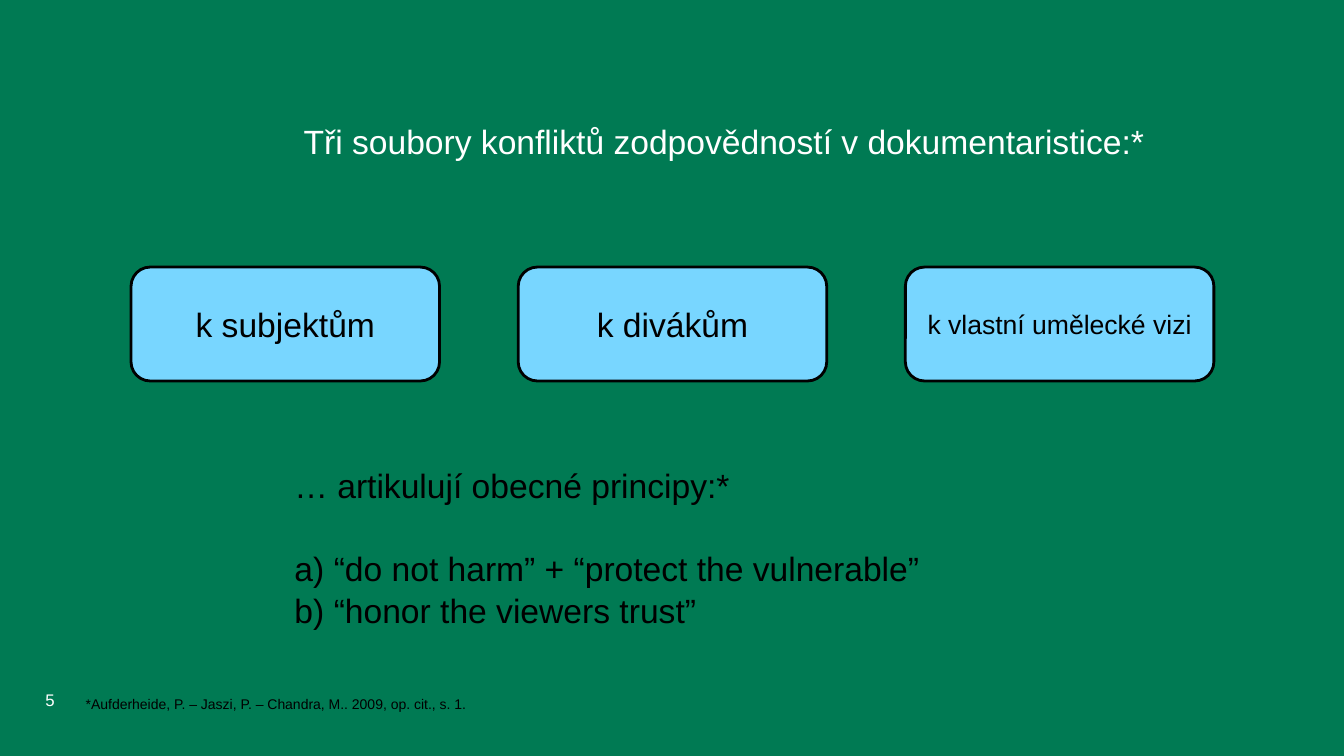
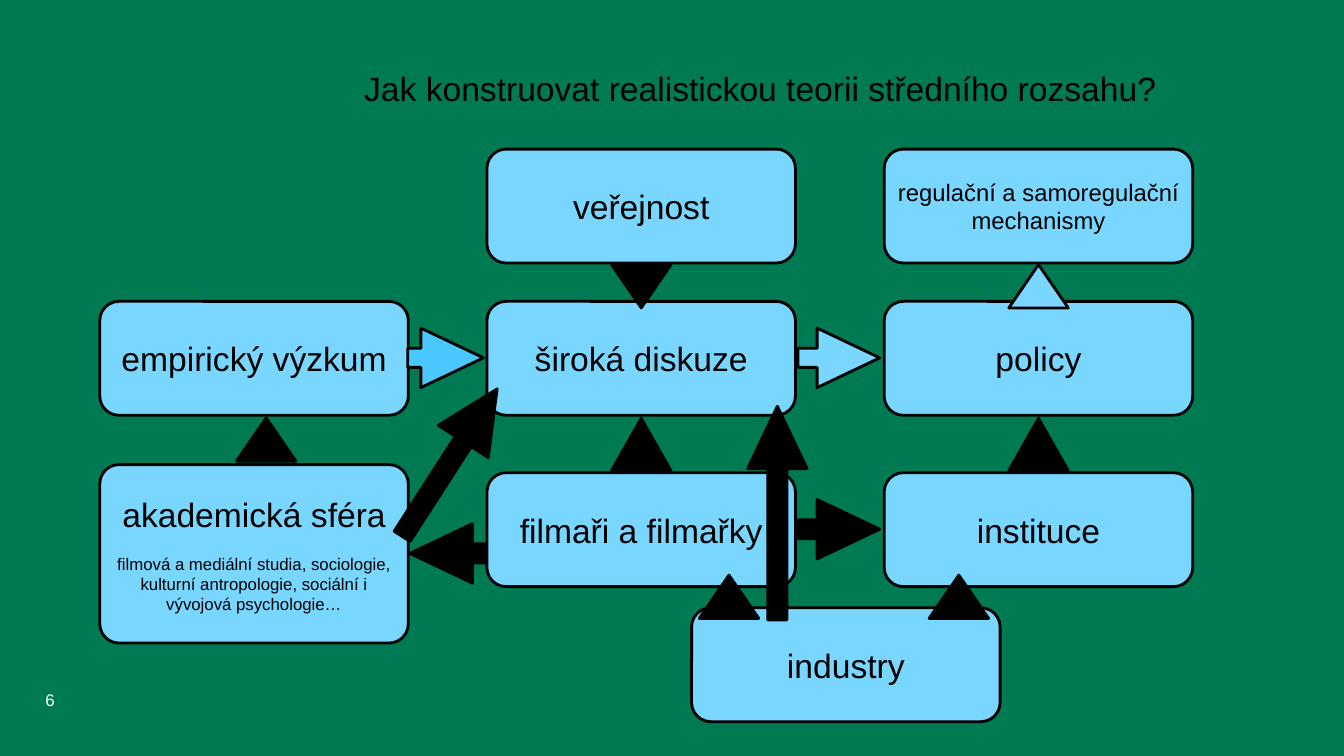
from pptx import Presentation
from pptx.dml.color import RGBColor
from pptx.enum.shapes import MSO_SHAPE
from pptx.enum.text import MSO_ANCHOR, MSO_AUTO_SIZE, PP_ALIGN
from pptx.oxml.ns import qn
from pptx.util import Pt
from lxml import etree

ROUNDED, ARROW = MSO_SHAPE.ROUNDED_RECTANGLE, MSO_SHAPE.RIGHT_ARROW
TOP, MIDDLE = MSO_ANCHOR.TOP, MSO_ANCHOR.MIDDLE
LEFT, CENTER = PP_ALIGN.LEFT, PP_ALIGN.CENTER
FIXED = MSO_AUTO_SIZE.NONE

# Shared look
GREEN, SKY, BLUE = "007A53", "78D6FF", "4BC8FF"
BLACK, WHITE = "000000", "FFFFFF"
FONT = "Arial"
TEXT_SIZE, SMALL_SIZE, NOTE_SIZE = 24, 12, 10
INSET = 5

# Node and arrow geometry, in px
NODE_WIDTH, NODE_HEIGHT, CORNER = 306, 113, 19
ARROW_THICKNESS, ARROW_HEAD, SHAFT_RATIO = 59, 62, 0.32
RIGHT, DOWN, BACK, UP = 0, 90, 180, 270


def px(count):
    """One px is a hundredth of an inch."""
    return int(count * 9144)


def color(value):
    return RGBColor.from_string(value)


def place(shape, left, top, width, height):
    shape.left, shape.top = px(left), px(top)
    shape.width, shape.height = px(width), px(height)


def set_frame(frame, inset=INSET, anchor=TOP, wrap=True):
    frame.auto_size = FIXED
    frame.word_wrap = wrap
    frame.vertical_anchor = anchor
    frame.margin_left = frame.margin_right = px(inset)
    frame.margin_top = frame.margin_bottom = px(inset)


def add_span(para, text, size=TEXT_SIZE, fill=BLACK):
    span = para.add_run()
    span.text = text
    span.font.name = FONT
    span.font.size = Pt(size)
    span.font.color.rgb = color(fill)


def paint(shape, fill):
    shape.shadow.inherit = False
    shape.fill.solid()
    shape.fill.fore_color.rgb = color(fill)
    shape.line.color.rgb = color(BLACK)
    shape.line.width = Pt(2)
    outline = shape.element.spPr.find(qn("a:ln"))
    etree.SubElement(outline, qn("a:round"))


def add_label(page, at, text, size, fill=BLACK, inset=INSET, anchor=TOP, spacing=1.0):
    box = page.shapes.add_textbox(0, 0, 0, 0)
    place(box, *at)
    set_frame(box.text_frame, inset, anchor, wrap=False)
    para = box.text_frame.paragraphs[0]
    para.line_spacing = spacing
    add_span(para, text, size, fill)


def add_page(deck, layout, number, title, title_at, title_color):
    page = deck.slides.add_slide(deck.slide_layouts[layout])
    heading = page.shapes.title
    place(heading, *title_at)
    set_frame(heading.text_frame, inset=0)
    para = heading.text_frame.paragraphs[0]
    para.alignment = CENTER
    para.line_spacing = 1.14
    add_span(para, title, fill=title_color)
    add_label(page, (45, 685, 14, 19), number, SMALL_SIZE, WHITE, 0, MIDDLE)
    return page


def add_node(page, left, top, text, size=TEXT_SIZE, height=NODE_HEIGHT, detail=None):
    node = page.shapes.add_shape(ROUNDED, 0, 0, 0, 0)
    place(node, left, top, NODE_WIDTH, height)
    node.adjustments[0] = CORNER / height
    paint(node, SKY)
    frame = node.text_frame
    set_frame(frame, anchor=MIDDLE)
    para = frame.paragraphs[0]
    para.alignment = CENTER
    add_span(para, text, size)
    if detail:
        para = frame.add_paragraph()
        para.alignment = CENTER
        para.space_before = Pt(14)
        add_span(para, detail, SMALL_SIZE)


def add_arrow(page, center_x, center_y, length, angle, fill=BLACK):
    arrow = page.shapes.add_shape(ARROW, 0, 0, 0, 0)
    place(arrow, center_x - length / 2, center_y - ARROW_THICKNESS / 2,
          length, ARROW_THICKNESS)
    arrow.adjustments[0] = SHAFT_RATIO
    arrow.adjustments[1] = ARROW_HEAD / min(length, ARROW_THICKNESS)
    arrow.rotation = angle
    paint(arrow, fill)


def set_marker(para, indent, tag, **attributes):
    properties = para._p.get_or_add_pPr()
    properties.set("marL", str(px(indent)))
    properties.set("indent", str(-px(indent)))
    etree.SubElement(properties, qn(tag), **attributes)


def fill_principles(body, lead, principles):
    place(body, 287, 454, 700, 170)
    frame = body.text_frame
    set_frame(frame)
    for index, text in enumerate([lead] + principles):
        para = frame.add_paragraph() if index else frame.paragraphs[0]
        if index:
            set_marker(para, 39, "a:buAutoNum", type="alphaLcParenR")
        else:
            set_marker(para, 0, "a:buNone")
        para.alignment = LEFT
        para.line_spacing = 1.05
        para.space_before = Pt(29 if index == 1 else 0)
        add_span(para, text)


def build_conflicts(deck):
    page = add_page(deck, 1, "5", "Tři soubory konfliktů zodpovědností v dokumentaristice:*",
                    (103, 114, 1230, 76), WHITE)
    duties = [("k subjektům", 24), ("k divákům", 24), ("k vlastní umělecké vizi", 19)]
    for column, (text, size) in enumerate(duties):
        add_node(page, 130 + 384 * column, 265, text, size)
    fill_principles(page.placeholders[1], "… artikulují obecné principy:*",
                    ["“do not harm” + “protect the vulnerable”",
                     "“honor the viewers trust”"])
    add_label(page, (80, 682, 390, 25),
              "*Aufderheide, P. – Jaszi, P. – Chandra, M.. 2009, op. cit., s. 1.",
              NOTE_SIZE, spacing=1.2)


def build_theory(deck):
    page = add_page(deck, 5, "6", "Jak konstruovat realistickou teorii středního rozsahu?",
                    (340, 62, 828, 48), BLACK)

    # Nodes by column and row
    research, debate, policy = 99, 483, 877
    upper, center, lower = 148, 299, 469
    add_node(page, research, center, "empirický výzkum")
    add_node(page, debate, center, "široká diskuze")
    add_node(page, debate, lower, "filmaři a filmařky")
    add_node(page, research, 461, "akademická sféra", height=177,
             detail="filmová a mediální studia, sociologie, kulturní antropologie, "
                    "sociální i vývojová psychologie…")
    add_node(page, 686, 603, "industry")
    add_node(page, debate, upper, "veřejnost")
    add_node(page, policy, center, "policy")
    add_node(page, policy, upper, "regulační a samoregulační mechanismy", 17)
    add_node(page, policy, lower, "instituce")

    # Arrows: center, length, direction, fill
    debate_axis, policy_axis = debate + NODE_WIDTH // 2, policy + NODE_WIDTH // 2
    arrows = [
        (442, 355, 75, RIGHT, BLUE),
        (832, 355, 81, RIGHT, SKY),
        (264, 436, 43, UP),
        (debate_axis, 441, 52, UP),
        (policy_axis, 441, 52, UP),
        (723, 592, 43, UP),
        (951, 592, 43, UP),
        (444, 549, 75, BACK),
        (832, 525, 81, RIGHT),
        (policy_axis, 284, 43, UP, SKY),
        (debate_axis, 284, 43, DOWN),
        (771, 509, 212, UP),
        (446, 459, 174, 302.8),
    ]
    for arrow in arrows:
        add_arrow(page, *arrow)


def main():
    deck = Presentation()
    deck.slide_width, deck.slide_height = px(1333), px(750)
    backdrop = deck.slide_master.background.fill
    backdrop.solid()
    backdrop.fore_color.rgb = color(GREEN)
    build_conflicts(deck)
    build_theory(deck)
    deck.save("out.pptx")


if __name__ == "__main__":
    main()
